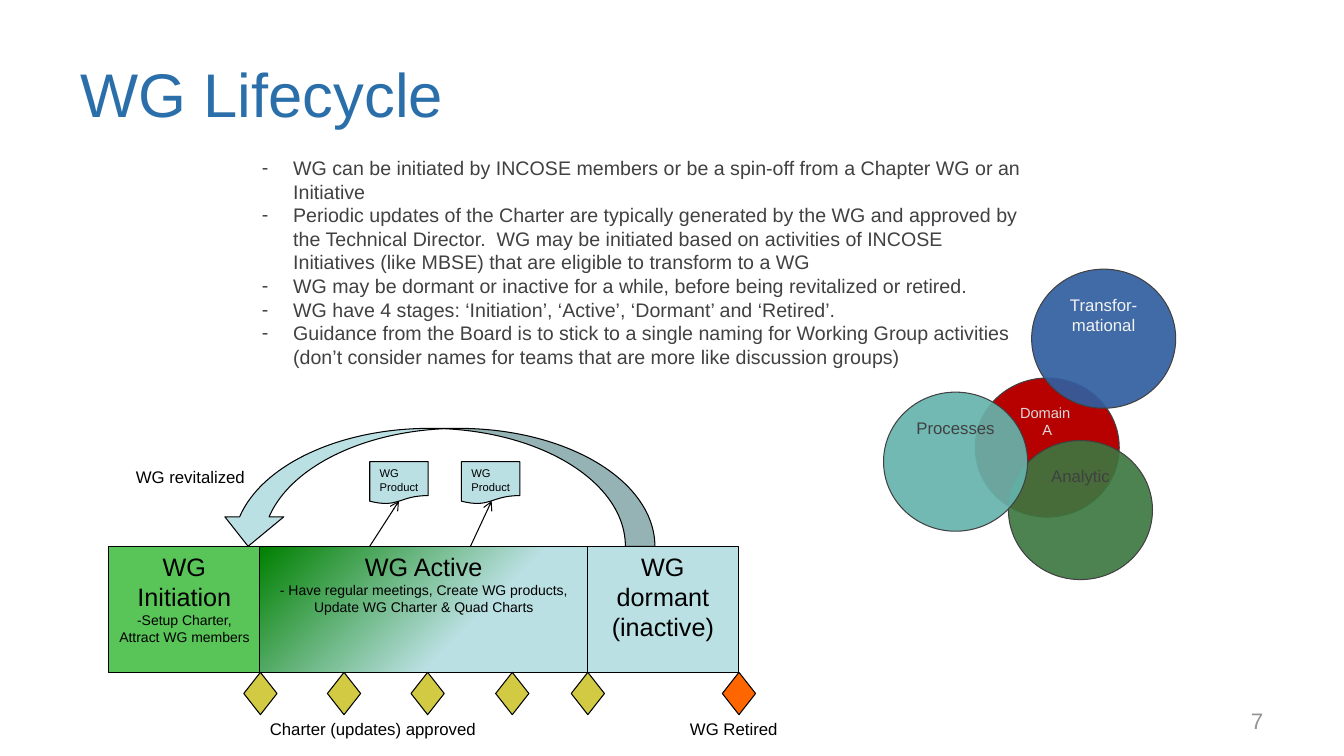
from lxml.etree import SubElement as Sub
from pptx import Presentation as Deck
from pptx.dml.color import RGBColor as RGB
from pptx.enum.shapes import MSO_CONNECTOR as Link, MSO_SHAPE as Form
from pptx.enum.text import MSO_ANCHOR as Anchor, MSO_AUTO_SIZE as Fit, PP_ALIGN as Align
from pptx.oxml.ns import qn
from pptx.util import Inches, Pt

BLACK = RGB(0, 0, 0)
BLUE = RGB(0x2B, 0x6F, 0xAA)
DARK = RGB(0x41, 0x40, 0x42)
GREY = RGB(0x93, 0x93, 0x93)
PALE = RGB(0xD9, 0xD9, 0xD9)
WHITE = RGB(0xF2, 0xF2, 0xF2)
RED = RGB(0xB7, 0x01, 0x01)
MOSS = RGB(0x3C, 0x77, 0x3F)
TEAL = RGB(0x65, 0xB4, 0xAC)
NAVY = RGB(0x31, 0x5F, 0xA0)
LIME = RGB(0x59, 0xC4, 0x57)
GREEN = RGB(0, 0x80, 0)
ICE = RGB(0xBB, 0xE0, 0xE3)
GOLD = RGB(0xD3, 0xCA, 0x44)
FLAME = RGB(0xFF, 0x66, 0)

POINTS = [
    "WG can be initiated by INCOSE members or be a spin-off from a Chapter WG or an Initiative",
    "Periodic updates of the Charter are typically generated by the WG and approved by the "
    "Technical Director.  WG may be initiated based on activities of INCOSE Initiatives "
    "(like MBSE) that are eligible to transform to a WG",
    "WG may be dormant or inactive for a while, before being revitalized or retired.",
    "WG have 4 stages: ‘Initiation’, ‘Active’, ‘Dormant’ and ‘Retired’.",
    "Guidance from the Board is to stick to a single naming for Working Group activities "
    "(don’t consider names for teams that are more like discussion groups)",
]


def write(shape, *lines, sizes=(12,), color=BLACK, align=Align.LEFT, anchor=Anchor.TOP,
          pads=(0.1, 0.05), bullet=None, wrap=True):
    frame = shape.text_frame
    frame.auto_size = Fit.NONE
    frame.word_wrap = wrap
    frame.vertical_anchor = anchor
    frame.margin_left = frame.margin_right = Inches(pads[0])
    frame.margin_top = frame.margin_bottom = Inches(pads[1])
    for i, line in enumerate(lines):
        para = frame.paragraphs[0] if i == 0 else frame.add_paragraph()
        para.text = line
        para.alignment = align
        para.space_before = Pt(0)
        if bullet:
            props = para._p.get_or_add_pPr()
            props.set("marL", str(Inches(0.31)))
            props.set("indent", str(-Inches(0.31)))
            Sub(props, qn("a:buChar")).set("char", bullet)
        font = para.font
        font.name = "Arial"
        font.size = Pt(sizes[min(i, len(sizes) - 1)])
        font.color.rgb = color


class Board:
    def __init__(self, slide, font_line=0.75):
        self.slide = slide
        self.width = Pt(font_line)

    def holder(self, index, box, *lines, **style):
        shape = self.slide.placeholders[index]
        shape.left, shape.top, shape.width, shape.height = map(Inches, box)
        write(shape, *lines, **style)

    def label(self, box, text, **style):
        write(self.slide.shapes.add_textbox(*map(Inches, box)), text, **style)

    def shape(self, form, box, fill, *lines, line=BLACK, alpha=100, **style):
        shape = self.slide.shapes.add_shape(form, *map(Inches, box))
        shape.shadow.inherit = False
        shape.fill.solid()
        shape.fill.fore_color.rgb = fill
        if alpha < 100:
            tint = shape._element.spPr.find(qn("a:solidFill"))[0]
            Sub(tint, qn("a:alpha")).set("val", str(alpha * 1000))
        shape.line.color.rgb = line
        shape.line.width = self.width
        if lines:
            write(shape, *lines, **style)
        return shape

    def glow(self, shape, stops):
        shape.fill.gradient()
        grad = shape._element.spPr.find(qn("a:gradFill"))
        for part in list(grad):
            grad.remove(part)
        marks = Sub(grad, qn("a:gsLst"))
        for place, color in stops:
            mark = Sub(marks, qn("a:gs"))
            mark.set("pos", str(place * 1000))
            Sub(mark, qn("a:srgbClr")).set("val", str(color))
        path = Sub(grad, qn("a:path"))
        path.set("path", "circle")
        rect = Sub(path, qn("a:fillToRect"))
        rect.set("l", "100000")
        rect.set("t", "100000")

    def arrow(self, *ends):
        line = self.slide.shapes.add_connector(Link.STRAIGHT, *map(Inches, ends))
        line.line.color.rgb = BLACK
        line.line.width = self.width
        Sub(line.line._get_or_add_ln(), qn("a:tailEnd")).set("type", "arrow")
        Sub(line._element.spPr, qn("a:effectLst"))


def main():
    deck = Deck()
    deck.slide_width, deck.slide_height = Inches(13.34), Inches(7.5)
    board = Board(deck.slides.add_slide(deck.slide_layouts[1]))

    board.holder(0, (0.67, 0.3, 12.01, 1.25), "WG Lifecycle", sizes=(44,), color=BLUE,
                 anchor=Anchor.MIDDLE, pads=(0.13, 0.07))
    board.holder(1, (2.5, 1.5, 7.83, 2.22), *POINTS, sizes=(14,), color=DARK, bullet="-")

    circles = [
        (9.68, 3.75, RED, 100, 10.5, PALE, ("Domain ", "A")),
        (10.01, 4.37, MOSS, 91, 12, DARK, ("Analytic",)),
        (8.77, 3.89, TEAL, 92, 12, DARK, ("Processes",)),
        (10.24, 2.67, NAVY, 92, 12, WHITE, ("Transfor-mational",)),
    ]
    for x, y, fill, alpha, size, color, lines in circles:
        board.shape(Form.OVAL, (x, y, 1.43, 1.38), fill, *lines, line=DARK, alpha=alpha,
                    sizes=(size,), color=color, align=Align.CENTER)

    board.label((9.56, 6.95, 3.11, 0.4), "7", sizes=(16,), color=GREY, align=Align.RIGHT,
                anchor=Anchor.MIDDLE, pads=(0.13, 0.07))

    stages = [
        (1.08, 1.5, LIME, ("WG Initiation", "-Setup Charter, Attract WG members ")),
        (2.58, 3.25, ICE, ("WG Active", "- Have regular meetings, Create WG products, "
                           "Update WG Charter & Quad Charts")),
        (5.83, 1.5, ICE, ("WG dormant (inactive)",)),
    ]
    boxes = [board.shape(Form.RECTANGLE, (x, 5.42, w, 1.25), fill, *lines, sizes=(18, 10),
                         align=Align.CENTER) for x, w, fill, lines in stages]
    board.glow(boxes[1], [(36, ICE), (100, GREEN)])

    for x in (2.42, 3.25, 4.08, 4.92, 5.67, 7.17):
        board.shape(Form.DIAMOND, (x, 6.67, 0.33, 0.42), FLAME if x > 7 else GOLD)

    board.label((2.58, 7.08, 2.27, 0.3), "Charter (updates) approved", wrap=False)
    board.label((6.75, 7.08, 1.17, 0.3), "WG Retired")

    for x, start, end in ((3.67, 3.67, 3.96), (4.58, 4.67, 4.88)):
        note = board.shape(Form.FLOWCHART_DOCUMENT, (x, 4.58, 0.58, 0.42), ICE, "WG Product",
                           sizes=(8,))
        note.text_frame.margin_right = Inches(0.05)
        board.arrow(start, 5.42, end, 4.97)

    loop = board.shape(Form.CURVED_RIGHT_ARROW, (3.75, 2.67, 1.17, 4.33), ICE)
    loop.rotation = 90
    for i, value in enumerate((0.25, 0.5, 0.25)):
        loop.adjustments[i] = value
    board.label((1.25, 4.58, 1.33, 0.3), "WG revitalized")

    deck.save("out.pptx")


if __name__ == "__main__":
    main()
